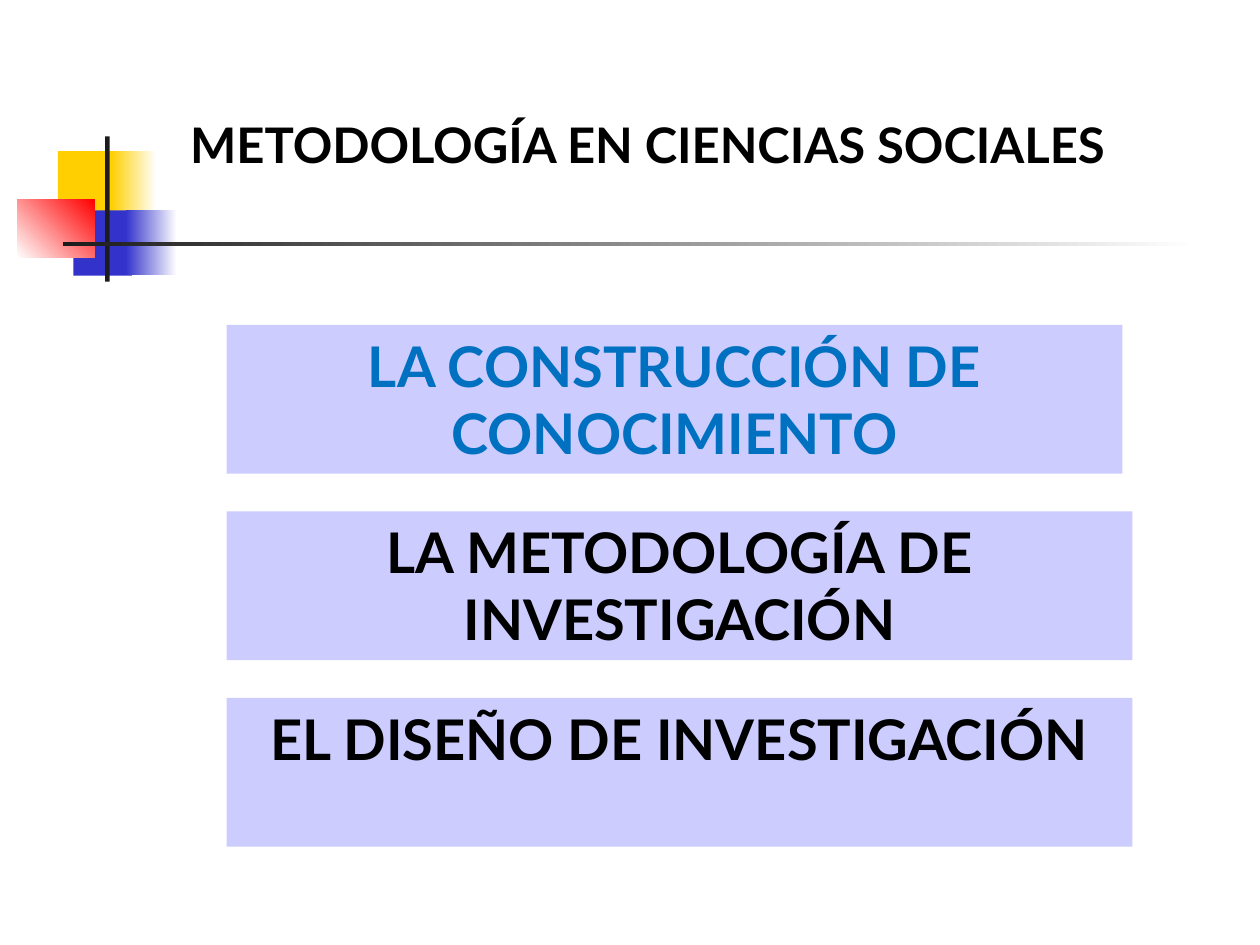
from pptx import Presentation
from pptx.dml.color import RGBColor
from pptx.enum.shapes import MSO_SHAPE as Shape
from pptx.enum.text import MSO_ANCHOR as Anchor, PP_ALIGN as Align
from pptx.util import Cm, Pt

YELLOW = RGBColor(0xFF, 0xCF, 0x01)
INDIGO = RGBColor(0x33, 0x33, 0xCC)
RED = RGBColor(0xFF, 0x00, 0x00)
CHARCOAL = RGBColor(0x1C, 0x1C, 0x1C)
LAVENDER = RGBColor(0xCC, 0xCC, 0xFF)
BLUE = RGBColor(0x00, 0x70, 0xC0)
BLACK = RGBColor(0x00, 0x00, 0x00)
WHITE = RGBColor(0xFF, 0xFF, 0xFF)


class TopicSlide:
    font_name = "Lato"
    title_size = Pt(28)
    topic_size = Pt(32)

    def __init__(self, presentation):
        self.slide = presentation.slides.add_slide(presentation.slide_layouts[5])

    def set_text(self, frame, text, size, color, align):
        frame.word_wrap = True
        frame.vertical_anchor = Anchor.TOP
        frame.text = text
        paragraph = frame.paragraphs[0]
        paragraph.alignment = align
        paragraph.font.name = self.font_name
        paragraph.font.size = size
        paragraph.font.bold = True
        paragraph.font.color.rgb = color

    def title(self, text, left, top, width, height):
        heading = self.slide.shapes.title
        heading.left, heading.top = Cm(left), Cm(top)
        heading.width, heading.height = Cm(width), Cm(height)
        self.set_text(heading.text_frame, text, self.title_size, BLACK, Align.LEFT)

    def block(self, color, left, top, width, height):
        block = self.slide.shapes.add_shape(
            Shape.RECTANGLE, Cm(left), Cm(top), Cm(width), Cm(height))
        block.shadow.inherit = False
        block.line.fill.background()
        block.fill.solid()
        block.fill.fore_color.rgb = color
        return block

    def fade(self, start, end, left, top, width, height, angle=0):
        fill = self.block(start, left, top, width, height).fill
        fill.gradient()
        fill.gradient_angle = angle
        for stop, color in zip(fill.gradient_stops, (start, end)):
            stop.color.rgb = color

    def topic(self, text, color, left, top, width, height):
        box = self.block(LAVENDER, left, top, width, height)
        self.set_text(box.text_frame, text, self.topic_size, color, Align.CENTER)


def main():
    presentation = Presentation()
    presentation.slide_width, presentation.slide_height = Cm(25.4), Cm(19.05)
    page = TopicSlide(presentation)

    page.block(YELLOW, 1.17, 3.05, 1.22, 1.32)
    page.fade(YELLOW, WHITE, 2.24, 3.05, 0.91, 1.32)
    page.block(INDIGO, 1.48, 4.24, 1.18, 1.32)
    page.fade(INDIGO, WHITE, 2.54, 4.23, 1.02, 1.32)
    page.fade(WHITE, RED, 0.35, 4.02, 1.56, 1.18, angle=45)
    page.block(CHARCOAL, 2.12, 2.75, 0.09, 2.93)
    page.fade(CHARCOAL, WHITE, 1.27, 4.87, 22.86, 0.09)

    page.title("METODOLOGÍA EN CIENCIAS SOCIALES", 3.58, 2.18, 21.23, 1.45)

    topics = [
        ("LA CONSTRUCCIÓN DE CONOCIMIENTO", BLUE, 18.06),
        ("LA METODOLOGÍA DE INVESTIGACIÓN", BLACK, 18.26),
        ("EL DISEÑO DE INVESTIGACIÓN", BLACK, 18.26),
    ]
    for row, (text, color, width) in enumerate(topics):
        page.topic(text, color, 4.57, 6.55 + 3.76 * row, width, 3)

    presentation.save("out.pptx")


if __name__ == "__main__":
    main()
